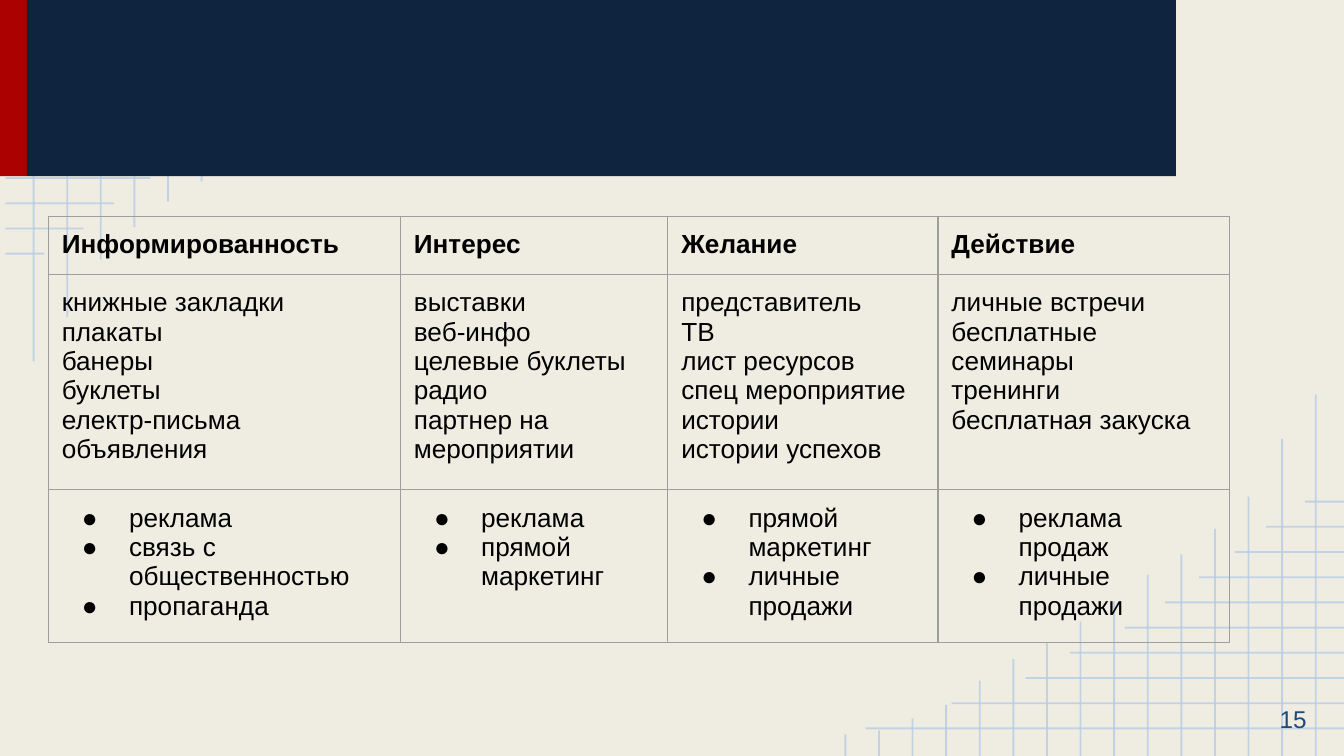
from lxml.etree import SubElement
from pptx import Presentation
from pptx.dml.color import RGBColor
from pptx.enum.shapes import MSO_CONNECTOR, MSO_SHAPE
from pptx.enum.text import MSO_ANCHOR, PP_ALIGN
from pptx.oxml.ns import qn
from pptx.util import Inches, Pt

CREAM = RGBColor(0xEF, 0xED, 0xE2)
PALE_BLUE = RGBColor(0xB7, 0xCC, 0xE4)
NAVY = RGBColor(0x0F, 0x24, 0x3E)
RED = RGBColor(0xAB, 0x01, 0x01)
BLUE = RGBColor(0x1F, 0x49, 0x7D)
GREY = RGBColor(0x9E, 0x9E, 0x9E)
BLACK = RGBColor(0, 0, 0)

FONT = "Arial"
WIDTH = 10
HEIGHT = WIDTH * 9 / 16
COLUMN_STEP, ROW_STEP = 0.25, 3 / 16
COLUMN_REACHES = [2.69, 2.36, 1.93, 1.69, 1.5, 1.35, 1.15, 1, 0.84, 0.72,
                  0.56, 0.38, 0.28, 0.19, 0.16]
ROW_REACHES = [3.56, 2.92, 2.37, 2.04, 1.63, 1.33, 1.08, 0.81, 0.58, 0.29]

COLUMN_WIDTHS = [2.62, 1.99, 2.01, 2.17]
ROW_HEIGHT = 0.42
STAGES = [
    ("Информированность",
     ["книжные закладки", "плакаты", "банеры", "буклеты", "електр-письма", "объявления"],
     ["реклама", "связь с общественностью", "пропаганда"]),
    ("Интерес",
     ["выставки", "веб-инфо", "целевые буклеты", "радио", "партнер на мероприятии"],
     ["реклама", "прямой маркетинг"]),
    ("Желание",
     ["представитель", "ТВ", "лист ресурсов", "спец мероприятие", "истории",
      "истории успехов"],
     ["прямой маркетинг", "личные продажи"]),
    ("Действие",
     ["личные встречи", "бесплатные семинары", "тренинги", "бесплатная закуска"],
     ["реклама продаж", "личные продажи"]),
]


def add_grid_line(page, x1, y1, x2, y2):
    """Draw one translucent line of the background grid."""
    line = page.shapes.add_connector(
        MSO_CONNECTOR.STRAIGHT, Inches(x1), Inches(y1), Inches(x2), Inches(y2))
    line.line.color.rgb = PALE_BLUE
    line.line.width = Pt(1)
    properties = line._element.spPr
    SubElement(properties.find(".//" + qn("a:srgbClr")), qn("a:alpha"), val="78000")
    SubElement(properties, qn("a:effectLst"))


def add_corner_grid(page, first_column, first_row, column_base, row_base, direction,
                    clear_of=0):
    """Draw a tapering grid from a corner, leaving out lines within clear_of of it."""
    for index, reach in enumerate(COLUMN_REACHES):
        if reach > clear_of:
            x = first_column + direction * index * COLUMN_STEP
            add_grid_line(page, x, column_base, x, column_base + direction * reach)
    for index, reach in enumerate(ROW_REACHES):
        y = first_row + direction * index * ROW_STEP
        if abs(y - column_base) > clear_of:
            add_grid_line(page, row_base, y, row_base + direction * reach, y)


def add_banner(page, left, top, width, height, accent_width):
    """Draw the navy banner with its red strip on the left."""
    parts = [(left, accent_width, RED),
             (left + accent_width, width - accent_width, NAVY)]
    for part_left, part_width, color in parts:
        bar = page.shapes.add_shape(MSO_SHAPE.RECTANGLE, Inches(part_left), Inches(top),
                                    Inches(part_width), Inches(height))
        bar.shadow.inherit = False
        bar.fill.solid()
        bar.fill.fore_color.rgb = color
        bar.line.fill.background()


def set_margins(target):
    """Give a cell or text frame equal inner margins."""
    for side in ("left", "top", "right", "bottom"):
        setattr(target, f"margin_{side}", Inches(0.1))


def format_font(para, size, color, bold=False):
    """Set the font of every run in a paragraph and the size of its end mark."""
    for span in para.runs:
        span.font.name = FONT
        span.font.size = Pt(size)
        span.font.color.rgb = color
        span.font.bold = bold
    SubElement(para._p, qn("a:endParaRPr"), sz=str(size * 100))


def add_page_number(page, left, top, width, height):
    """Place the right-aligned page number."""
    box = page.shapes.add_textbox(Inches(left), Inches(top), Inches(width), Inches(height))
    frame = box.text_frame
    frame.word_wrap = True
    frame.vertical_anchor = MSO_ANCHOR.MIDDLE
    set_margins(frame)
    frame.text = "15"
    para = frame.paragraphs[0]
    para.alignment = PP_ALIGN.RIGHT
    format_font(para, 13, BLUE)


def add_bullet(para):
    """Turn a paragraph into a bulleted item with a hanging indent."""
    properties = para._p.get_or_add_pPr()
    properties.set("marL", str(Inches(0.5)))
    properties.set("indent", str(Inches(-0.35)))
    color = SubElement(properties, qn("a:buClr"))
    SubElement(color, qn("a:srgbClr"), val=str(BLACK))
    SubElement(properties, qn("a:buSzPts"), val="1400")
    SubElement(properties, qn("a:buFont"), typeface=FONT)
    SubElement(properties, qn("a:buChar"), char="●")


def outline_cell(cell):
    """Draw grey borders on all four sides of a cell."""
    properties = cell._tc.get_or_add_tcPr()
    for side in ("lnL", "lnR", "lnT", "lnB"):
        border = SubElement(properties, qn(f"a:{side}"), w=str(Pt(0.75)))
        fill = SubElement(border, qn("a:solidFill"))
        SubElement(fill, qn("a:srgbClr"), val=str(GREY))


def fill_cell(cell, lines, bold, bulleted):
    """Write lines into a cell and style them."""
    outline_cell(cell)
    cell.fill.background()
    set_margins(cell)
    cell.text_frame.text = "\n".join(lines)
    for para in cell.text_frame.paragraphs:
        format_font(para, 14, BLACK, bold)
        if bulleted:
            add_bullet(para)


def add_stage_table(page, left, top):
    """Build the table of stages, their materials and their promotion tools."""
    row_count = len(STAGES[0])
    table = page.shapes.add_table(
        row_count, len(STAGES), Inches(left), Inches(top),
        Inches(sum(COLUMN_WIDTHS)), Inches(row_count * ROW_HEIGHT)).table
    table.first_row = False
    table.horz_banding = False
    for index, (width, (stage, materials, tools)) in enumerate(zip(COLUMN_WIDTHS, STAGES)):
        table.columns[index].width = Inches(width)
        for row, lines in enumerate(([stage], materials, tools)):
            fill_cell(table.cell(row, index), lines, bold=row == 0, bulleted=row == 2)


def main():
    """Build the deck and save it."""
    deck = Presentation()
    deck.slide_width, deck.slide_height = Inches(WIDTH), Inches(HEIGHT)
    page = deck.slides.add_slide(deck.slide_layouts[6])
    page.background.fill.solid()
    page.background.fill.fore_color.rgb = CREAM
    add_corner_grid(page, 0.25, 0.2, 0, 0.04, 1, clear_of=1.31)
    add_corner_grid(page, 9.79, 5.42, HEIGHT, WIDTH, -1)
    add_page_number(page, 9.22, 5.06, 0.6, 0.57)
    add_banner(page, 0, -0.01, 8.75, 1.32, 0.2)
    add_stage_table(page, 0.36, 1.61)
    deck.save("out.pptx")


if __name__ == "__main__":
    main()
